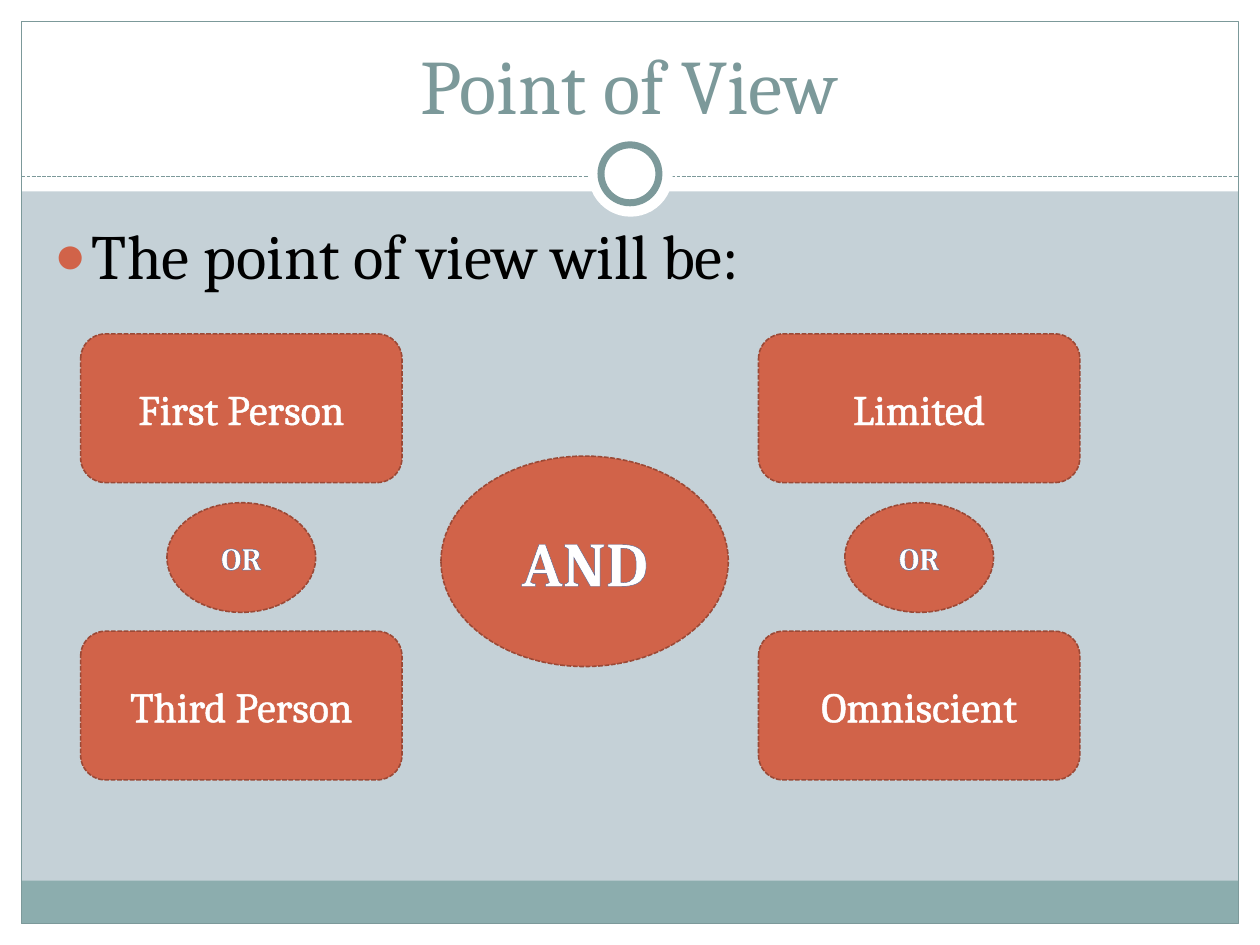
from lxml import etree
from pptx import Presentation
from pptx.dml.color import RGBColor
from pptx.enum.dml import MSO_LINE
from pptx.enum.shapes import MSO_CONNECTOR, MSO_SHAPE
from pptx.enum.text import MSO_ANCHOR, MSO_AUTO_SIZE, PP_ALIGN
from pptx.oxml.ns import qn
from pptx.util import Inches, Pt

RECT, ROUND, OVAL = MSO_SHAPE.RECTANGLE, MSO_SHAPE.ROUNDED_RECTANGLE, MSO_SHAPE.OVAL
STRAIGHT = MSO_CONNECTOR.STRAIGHT
DASH = MSO_LINE.SQUARE_DOT
MIDDLE, BOTTOM, TOP = MSO_ANCHOR.MIDDLE, MSO_ANCHOR.BOTTOM, MSO_ANCHOR.TOP
CENTER, LEFT = PP_ALIGN.CENTER, PP_ALIGN.LEFT
NO_FIT = MSO_AUTO_SIZE.NONE

FONT = "Cambria"
WHITE, BLACK, SLATE, TEAL = "FFFFFF", "000000", "7C999A", "8CADAE"
PALE, RUST, DARK_RUST, INDIGO = "C5D1D7", "D16349", "9B4936", "5B668F"
WIDTH, HEIGHT, MARGIN = 10, 7.5, 0.17


def rgb(color):
    """Turn a hex string into a colour."""
    return RGBColor.from_string(color)


def add_xml(parent, tag, **attributes):
    """Append a DrawingML element to a parent."""
    return etree.SubElement(parent, qn(tag), attributes)


def style_line(line, color, width, dash=None):
    """Give a line its colour, width and dash."""
    line.color.rgb = rgb(color)
    line.width = Pt(width)
    if dash:
        line.dash_style = dash


def add_figure(slide, kind, box, fill=None, line=None):
    """Add a preset shape with optional fill and line."""
    figure = slide.shapes.add_shape(kind, *map(Inches, box))
    figure.shadow.inherit = False
    if fill:
        figure.fill.solid()
        figure.fill.fore_color.rgb = rgb(fill)
    else:
        figure.fill.background()
    if line:
        style_line(figure.line, *line)
    else:
        figure.line.fill.background()
    return figure


def add_text(frame, text, size, color, align=CENTER, anchor=MIDDLE, bold=False):
    """Write one formatted run into a text frame."""
    frame.word_wrap = True
    frame.auto_size = NO_FIT
    frame.vertical_anchor = anchor
    paragraph = frame.paragraphs[0]
    paragraph.alignment = align
    paragraph.space_before = Pt(0)
    run = paragraph.add_run()
    run.text = text
    run.font.name, run.font.size, run.font.bold = FONT, Pt(size), bold
    run.font.color.rgb = rgb(color)
    return run


def outline_text(run, color, width):
    """Draw an outline around the letters of a run."""
    properties = run.font._element
    outline = add_xml(properties, "a:ln", w=str(Pt(width)))
    fill = add_xml(outline, "a:solidFill")
    add_xml(fill, "a:srgbClr", val=color)
    properties.insert(0, outline)


def add_bullet(paragraph, color):
    """Give a paragraph a hanging round bullet."""
    properties = paragraph._p.get_or_add_pPr()
    properties.set("marL", str(Inches(0.3)))
    properties.set("indent", str(Inches(-0.3)))
    add_xml(add_xml(properties, "a:buClr"), "a:srgbClr", val=color)
    add_xml(properties, "a:buSzPct", val="85000")
    add_xml(properties, "a:buChar", char="●")


def add_frame(slide):
    """Draw the white border, header, footer band and ring."""
    for box in (
        (0, HEIGHT - MARGIN, WIDTH, MARGIN),
        (0, 0, WIDTH, 1.52),
        (0, 0, MARGIN, HEIGHT),
        (WIDTH - MARGIN, 0, MARGIN, HEIGHT),
    ):
        add_figure(slide, RECT, box, WHITE)
    inner_width = WIDTH - 2 * MARGIN
    add_figure(slide, RECT, (MARGIN, 6.99, inner_width, 0.34), TEAL)
    border = (MARGIN, MARGIN, inner_width, HEIGHT - 2 * MARGIN)
    add_figure(slide, RECT, border, line=(SLATE, 0.75))
    divider = slide.shapes.add_connector(
        STRAIGHT, Inches(MARGIN), Inches(1.4), Inches(WIDTH - MARGIN), Inches(1.4)
    )
    style_line(divider.line, SLATE, 0.75, DASH)
    add_xml(divider._element.spPr, "a:effectLst")
    add_figure(slide, OVAL, (4.67, 1.05, 0.67, 0.67), WHITE)
    add_figure(slide, OVAL, (4.77, 1.15, 0.46, 0.46), WHITE, (SLATE, 4))


def place_placeholder(slide, placeholder, box):
    """Position a placeholder in front of the frame."""
    placeholder.left, placeholder.top, placeholder.width, placeholder.height = map(
        Inches, box
    )
    slide.shapes.element.append(placeholder.element)
    return placeholder.text_frame


def add_node(slide, kind, box, text, size, outline, bold=False):
    """Add a labelled rust-coloured node."""
    node = add_figure(slide, kind, box, RUST, (DARK_RUST, 0.9, DASH))
    run = add_text(node.text_frame, text, size, WHITE, bold=bold)
    outline_text(run, *outline)


def main():
    """Build the slide and save it."""
    deck = Presentation()
    deck.slide_width, deck.slide_height = Inches(WIDTH), Inches(HEIGHT)
    slide = deck.slides.add_slide(deck.slide_layouts[1])
    slide.background.fill.solid()
    slide.background.fill.fore_color.rgb = rgb(PALE)
    add_frame(slide)

    title, body = slide.shapes.title, slide.placeholders[1]
    heading = place_placeholder(slide, title, (0.33, 0.25, 9.33, 0.83))
    add_text(heading, "Point of View", 44, SLATE, anchor=BOTTOM)
    statement = place_placeholder(slide, body, (0.33, 1.67, 9.3, 5))
    add_bullet(statement.paragraphs[0], RUST)
    add_text(statement, "The point of view will be:", 36, BLACK, LEFT, TOP)

    choices = ((0.64, ("First Person", "Third Person")), (6.02, ("Limited", "Omniscient")))
    for left, options in choices:
        for top, option in zip((2.65, 5.01), options):
            add_node(slide, ROUND, (left, top, 2.55, 1.18), option, 24, (WHITE, 1.45))
        joiner = (left + (2.55 - 1.18) / 2, 3.99, 1.18, 0.87)
        add_node(slide, OVAL, joiner, "OR", 18, (INDIGO, 1), True)
    add_node(slide, OVAL, (3.5, 3.62, 2.28, 1.67), "AND", 36, (INDIGO, 1), True)
    deck.save("out.pptx")


if __name__ == "__main__":
    main()
